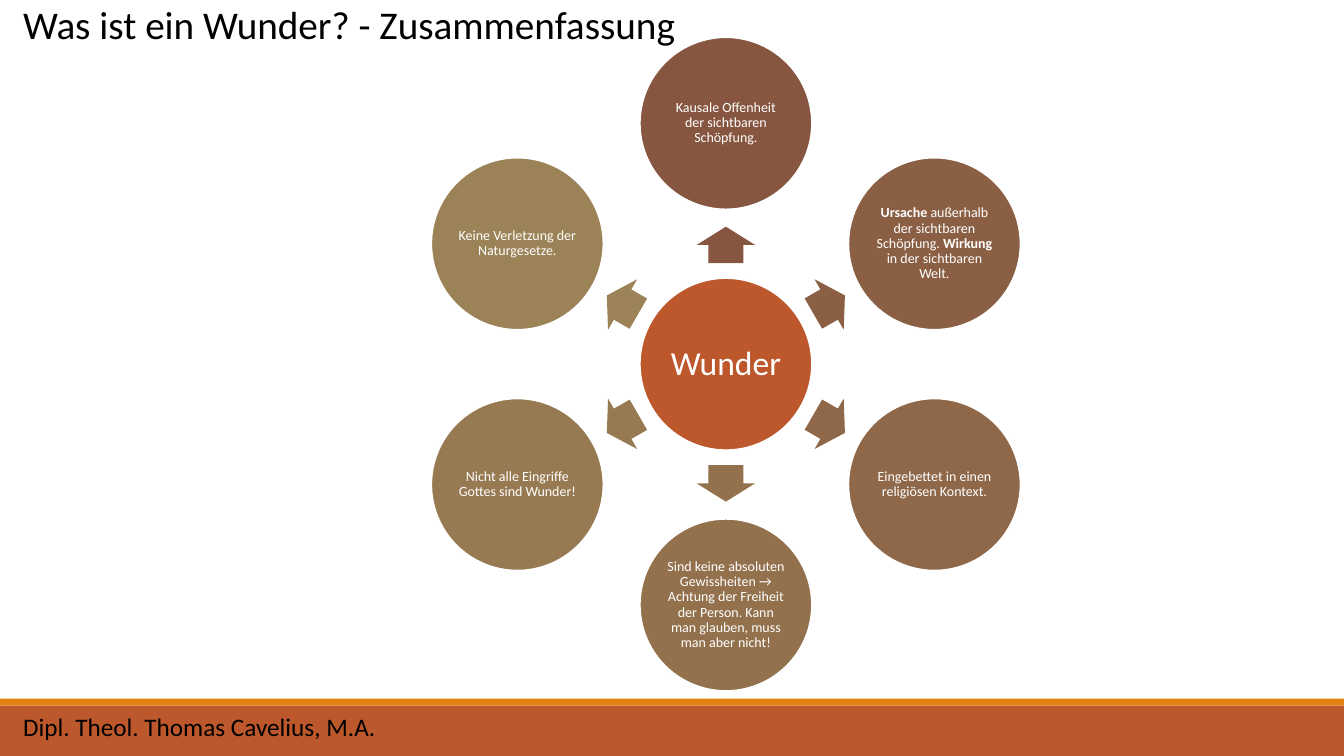
"""Build the summary slide on miracles: a hub, six radiating statements and a footer."""
from dataclasses import dataclass
from math import cos, radians, sin

from pptx import Presentation
from pptx.dml.color import RGBColor
from pptx.enum.shapes import MSO_SHAPE as Preset
from pptx.enum.text import MSO_ANCHOR as Anchor, PP_ALIGN as Align
from pptx.util import Pt


@dataclass(frozen=True)
class Theme:
    font: str = "Calibri"
    ink: str = "000000"
    paper: str = "FFFFFF"
    rust: str = "BD582C"
    amber: str = "E48312"
    title_size: int = 28
    hub_size: int = 24
    footer_size: int = 18
    statement_size: int = 10


theme = Theme()


def write(frame, text, *, size, color, inset=None, centred=False):
    """Fill a text frame; passages between double asterisks are bold."""
    paragraph = frame.paragraphs[0]
    if centred:
        frame.word_wrap = True
        frame.vertical_anchor = Anchor.MIDDLE
        frame.margin_left = frame.margin_right = Pt(inset)
        frame.margin_top = frame.margin_bottom = Pt(inset)
        paragraph.alignment = Align.CENTER
        paragraph.line_spacing = 0.9
    for index, passage in enumerate(text.split("**")):
        if passage:
            run = paragraph.add_run()
            run.text = passage
            run.font.name = theme.font
            run.font.size = Pt(size)
            run.font.bold = index % 2 == 1
            run.font.color.rgb = RGBColor.from_string(color)


def draw(preset, left, top, width, height, fill, outline=None):
    """Add a filled preset shape without shadow."""
    shape = slide.shapes.add_shape(preset, Pt(left), Pt(top), Pt(width), Pt(height))
    shape.shadow.inherit = False
    shape.fill.solid()
    shape.fill.fore_color.rgb = RGBColor.from_string(fill)
    if outline:
        shape.line.color.rgb = RGBColor.from_string(outline)
        shape.line.width = Pt(1.25)
    else:
        shape.line.fill.background()
    return shape


deck = Presentation()
deck.slide_width, deck.slide_height = Pt(960), Pt(540)
slide = deck.slides.add_slide(deck.slide_layouts[6])

draw(Preset.RECTANGLE, 0, 504, 960, 36, theme.rust)
draw(Preset.RECTANGLE, 0, 499, 960, 5, theme.amber)

labels = [
    ("Dipl. Theol. Thomas Cavelius, M.A.", 504.7, 280, 29, theme.footer_size),
    ("Was ist ein Wunder? - Zusammenfassung", -3.6, 482, 41, theme.title_size),
]
for text, top, width, height, size in labels:
    label = slide.shapes.add_textbox(Pt(9.4), Pt(top), Pt(width), Pt(height))
    label.text_frame.word_wrap = False
    write(label.text_frame, text, size=size, color=theme.ink)

center_x, center_y = 518.5, 260.1
disc = 123
statement_radius, arrow_radius = 172, 85.2
arrow_length, arrow_breadth = 26, 41.6

hub = draw(Preset.OVAL, center_x - disc / 2, center_y - disc / 2, disc, disc,
           theme.rust, theme.paper)
write(hub.text_frame, "Wunder", size=theme.hub_size, color=theme.paper,
      inset=2.2, centred=True)

statements = [
    ("Kausale Offenheit der sichtbaren Schöpfung.", "865640"),
    ("**Ursache **außerhalb der sichtbaren Schöpfung. **Wirkung** in der sichtbaren Welt.",
     "8A5F44"),
    ("Eingebettet in einen religiösen Kontext.", "8F6849"),
    ("Sind keine absoluten Gewissheiten → Achtung der Freiheit der Person. "
     "Kann man glauben, muss man aber nicht!", "93714D"),
    ("Nicht alle Eingriffe Gottes sind Wunder!", "977A52"),
    ("Keine Verletzung der Naturgesetze.", "9B8357"),
]
step = 360 / len(statements)
for index, (text, color) in enumerate(statements):
    angle = (270 + index * step) % 360
    across, down = cos(radians(angle)), sin(radians(angle))

    arrow = draw(Preset.RIGHT_ARROW,
                 center_x + arrow_radius * across - arrow_length / 2,
                 center_y + arrow_radius * down - arrow_breadth / 2,
                 arrow_length, arrow_breadth, color)
    arrow.adjustments[0], arrow.adjustments[1] = 0.6, 0.5
    arrow.rotation = angle

    statement = draw(Preset.OVAL,
                     center_x + statement_radius * across - disc / 2,
                     center_y + statement_radius * down - disc / 2,
                     disc, disc, color, theme.paper)
    write(statement.text_frame, text, size=theme.statement_size, color=theme.paper,
          inset=0.8, centred=True)

deck.save("out.pptx")
